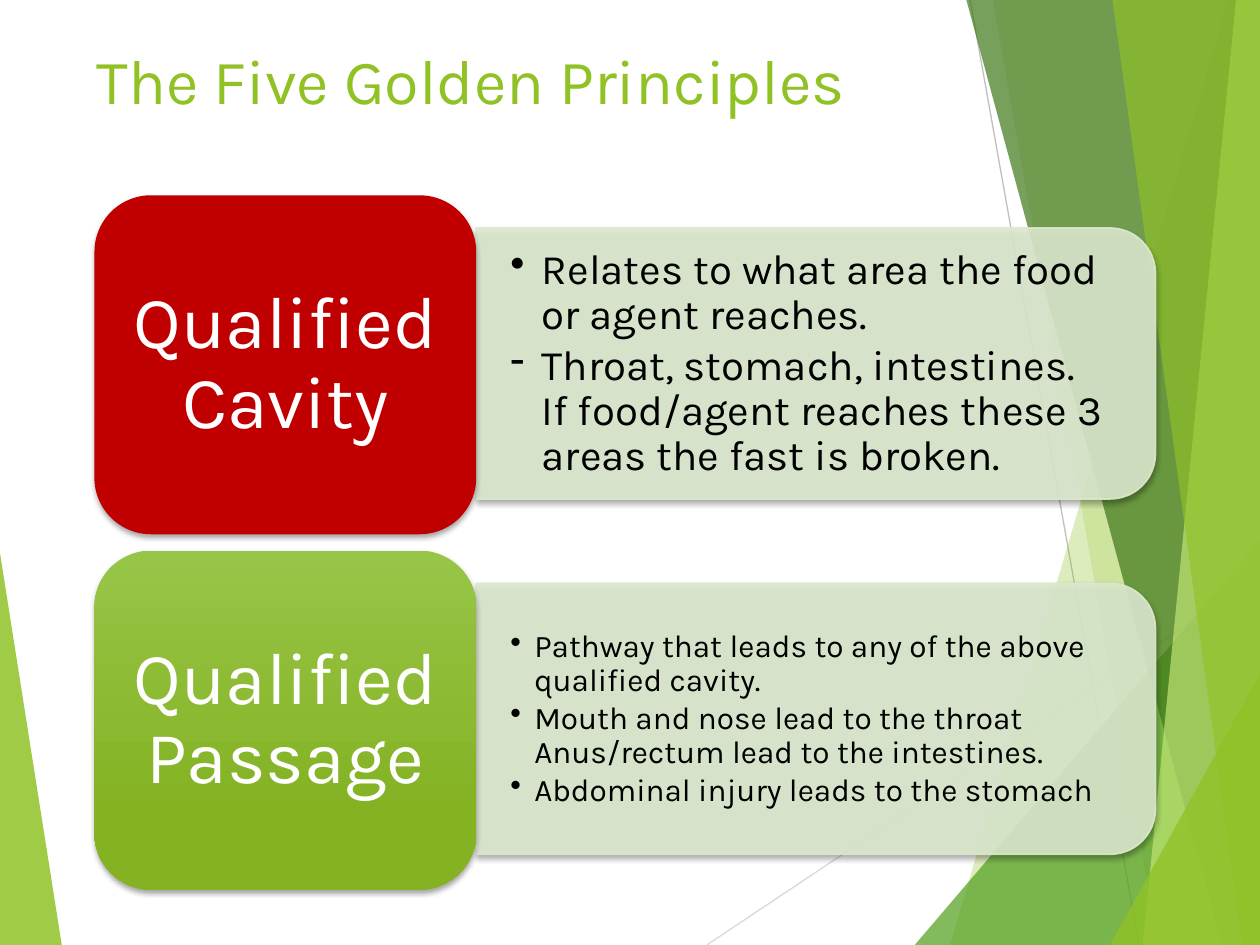
"""Build the slide on the qualified cavity and the qualified passage."""
from lxml.etree import SubElement
from pptx import Presentation
from pptx.dml.color import RGBColor
from pptx.enum.shapes import MSO_CONNECTOR, MSO_SHAPE
from pptx.enum.text import MSO_ANCHOR, PP_ALIGN
from pptx.oxml.ns import qn
from pptx.util import Inches, Pt

presentation = Presentation()
presentation.slide_width, presentation.slide_height = Inches(10), Inches(7.5)
slide = presentation.slides.add_slide(presentation.slide_layouts[6])
column = presentation.slide_width / 10
row = presentation.slide_height / 7.5


def paint(color, value, opacity=100):
    color.rgb = RGBColor.from_string(value)
    if opacity < 100:
        SubElement(color._color._xClr, qn("a:alpha"), val=str(opacity * 1000))


def add_text(place, paragraphs, size, color, frame_format, paragraph_format, indent=0):
    left, top, width, height = place
    box = slide.shapes.add_textbox(*map(int, (left * column, top * row, width * column, height * row)))
    for name, value in {"word_wrap": True, **frame_format}.items():
        setattr(box.text_frame, name, value)
    for index, (bullet, text) in enumerate(paragraphs):
        paragraph = box.text_frame.add_paragraph() if index else box.text_frame.paragraphs[0]
        if bullet:
            properties = paragraph._p.get_or_add_pPr()
            properties.set("marL", str(Inches(indent)))
            properties.set("indent", str(-Inches(indent)))
            SubElement(properties, qn("a:buChar"), char=bullet)
        for name, value in paragraph_format.items():
            setattr(paragraph, name, value)
        run = paragraph.add_run()
        run.text = text
        for name, value in {"name": "Karla", "size": Pt(size)}.items():
            setattr(run.font, name, value)
        run.font.fill.solid()
        paint(run.font.fill.fore_color, color)


facets = [
    ([(0, 4.39), (0.49, 7.5), (0, 7.5)], "90C226", 85),
    ([(9.75, 0), (7.54, 7.5), (10, 7.5), (10, 0)], "90C226", 30),
    ([(7.88, 0), (9.19, 7.5), (10, 7.5), (10, 0)], "90C226", 20),
    ([(7.26, 7.5), (10, 4.29), (10, 7.5)], "54A021", 72),
    ([(7.67, 0), (9.7, 7.5), (10, 7.5), (10, 0)], "3F7819", 70),
    ([(9.81, 0), (9.07, 7.5), (10, 7.5), (10, 0)], "C0E474", 70),
    ([(8.83, 0), (9.86, 7.5), (10, 7.5), (10, 0)], "90C226", 65),
    ([(8.81, 7.5), (10, 5.35), (10, 7.5)], "90C226", 80),
]
rays = [((5.61, 7.5), (10, 4.57), "D9D9D9"), ((7.7, 0), (9.04, 7.5), "BFBFBF")]

for index, (corners, color, opacity) in enumerate(facets):
    points = [(x * column, y * row) for x, y in corners]
    builder = slide.shapes.build_freeform(*points[0])
    builder.add_line_segments(points[1:], close=True)
    facet = builder.convert_to_shape()
    facet.shadow.inherit = False
    facet.fill.solid()
    paint(facet.fill.fore_color, color, opacity)
    facet.line.fill.background()
    if index == 0:
        for start, end, ray_color in rays:
            ray = slide.shapes.add_connector(
                MSO_CONNECTOR.STRAIGHT,
                *map(int, (start[0] * column, start[1] * row, end[0] * column, end[1] * row)))
            ray.line.width = Pt(0.75)
            ray.line.fill.solid()
            paint(ray.line.fill.fore_color, ray_color)
            SubElement(ray._element.spPr, qn("a:effectLst"))

add_text((0.67, 0.28, 9, 1.25), [("", "The Five Golden Principles")], 36, "90C226", {}, {})

principles = [
    ("Qualified Cavity", ["C00000"], 24, 0.25, [
        ("•", "Relates to what area the food or agent reaches."),
        ("-", "Throat, stomach, intestines. If food/agent reaches these 3 areas the fast is broken."),
    ]),
    ("Qualified Passage", ["97C547", "84B223"], 18, 0.19, [
        ("•", "Pathway that leads to any of the above qualified cavity."),
        ("•", "Mouth and nose lead to the throat Anus/rectum lead to the intestines."),
        ("•", "Abdominal injury leads to the stomach"),
    ]),
]
detail_frame = {"vertical_anchor": MSO_ANCHOR.MIDDLE, "margin_left": Inches(0.27), "margin_right": Inches(0.27),
                "margin_top": Inches(0.14), "margin_bottom": Inches(0.14)}
label_frame = {"vertical_anchor": MSO_ANCHOR.MIDDLE, "margin_left": Inches(0.17), "margin_right": Inches(0.17),
               "margin_top": Inches(0.09), "margin_bottom": Inches(0.09)}

for index, (label, colors, size, indent, details) in enumerate(principles):
    top = 1.55 + index * 2.82
    panel = slide.shapes.add_shape(
        MSO_SHAPE.ROUND_2_SAME_RECTANGLE,
        *map(int, (5.4 * column, (top - 1.36) * row, 2.15 * column, 5.39 * row)))
    panel.rotation = 90
    panel.fill.solid()
    paint(panel.fill.fore_color, "DBE9CD", 90)
    panel.line.width = Pt(1)
    panel.line.fill.solid()
    paint(panel.line.fill.fore_color, "DBE9CD", 90)
    add_text((3.78, top + 0.37, 5.29, 1.94), details, size, "000000", detail_frame,
             {"line_spacing": 0.9, "space_after": Pt(size * 0.12)}, indent)

    card = slide.shapes.add_shape(
        MSO_SHAPE.ROUNDED_RECTANGLE, *map(int, (0.75 * column, top * row, 3.03 * column, 2.69 * row)))
    card.line.fill.background()
    if len(colors) == 1:
        card.fill.solid()
        paint(card.fill.fore_color, colors[0])
    else:
        card.fill.gradient()
        card.fill.gradient_angle = 270
        for stop, color, position in zip(card.fill.gradient_stops, colors, (0, 0.78)):
            paint(stop.color, color)
            stop.position = position
    for shape in (panel, card):
        shape.shadow.inherit = False
        effects = shape._element.spPr.find(qn("a:effectLst"))
        shadow = SubElement(effects, qn("a:outerShdw"), blurRad=str(Pt(3)), dist=str(Pt(2)),
                            dir="5400000", rotWithShape="0")
        shadow_color = SubElement(shadow, qn("a:srgbClr"), val="000000")
        SubElement(shadow_color, qn("a:alpha"), val="35000")
    add_text((0.88, top + 0.13, 2.77, 2.43), [("", label)], 42, "FFFFFF", label_frame,
             {"line_spacing": 0.9, "alignment": PP_ALIGN.CENTER})

presentation.save("out.pptx")
